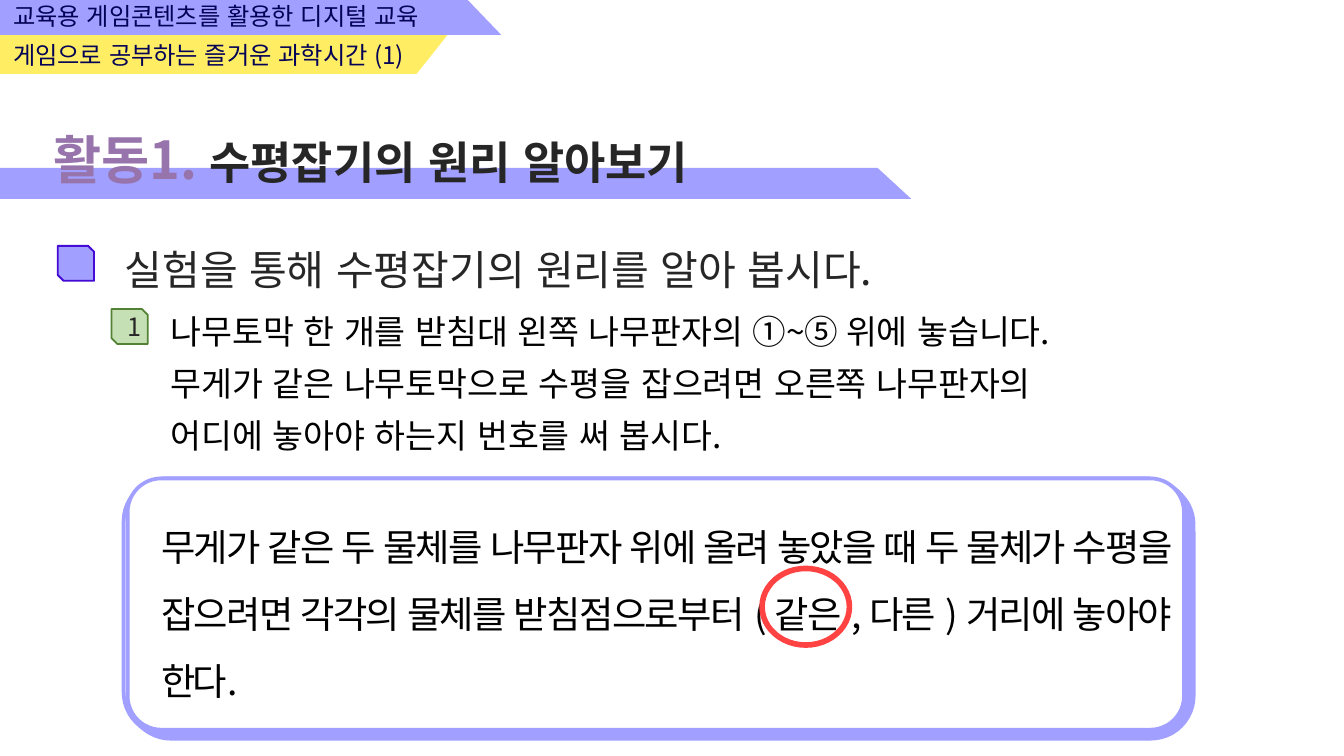
from lxml.etree import SubElement
from pptx import Presentation
from pptx.dml.color import RGBColor
from pptx.enum.lang import MSO_LANGUAGE_ID as Language
from pptx.enum.shapes import MSO_SHAPE as Preset
from pptx.enum.text import MSO_ANCHOR as Anchor, MSO_AUTO_SIZE as AutoSize, PP_ALIGN as Align
from pptx.oxml.ns import qn
from pptx.util import Inches, Pt

FONT = "Noto Sans CJK KR"
LILAC = RGBColor(0xA1, 0x9F, 0xFF)
YELLOW = RGBColor(0xFF, 0xEE, 0x63)
NAVY = RGBColor(0x04, 0x02, 0x57)
VIOLET = RGBColor(0x44, 0x0B, 0xD4)
MAUVE = RGBColor(0x97, 0x74, 0xAB)
PALE_GREEN = RGBColor(0xC5, 0xE0, 0xB4)
GREEN = RGBColor(0x54, 0x82, 0x35)
RED = RGBColor(0xFF, 0x43, 0x43)
INK = RGBColor(0x26, 0x26, 0x26)
BLACK = RGBColor(0, 0, 0)
WHITE = RGBColor(0xFF, 0xFF, 0xFF)


def write_span(para, text, size=18, color=BLACK, bold=False, tracking=0):
    span = para.add_run()
    span.text = text
    span.font.size = Pt(size)
    span.font.bold = bold
    span.font.color.rgb = color
    span.font.name = FONT
    span.font.language_id = Language.KOREAN
    properties = span._r.get_or_add_rPr()
    properties.set("kern", "0")  # keeps word gaps at full width
    SubElement(properties, qn("a:ea")).set("typeface", FONT)
    if tracking:
        properties.set("spc", str(int(tracking * 100)))


class Lesson:
    """Holds the page and draws each kind of element in the lesson style."""

    def __init__(self, page):
        self.page = page

    def fill_text(self, box, paragraphs, anchor=Anchor.TOP, align=Align.LEFT,
                  spacing=1.0, **style):
        """Each paragraph is a string, or a list of (text, style) pairs."""
        frame = box.text_frame
        frame.word_wrap = True
        frame.auto_size = AutoSize.NONE
        frame.vertical_anchor = anchor
        for index, content in enumerate(paragraphs):
            para = frame.add_paragraph() if index else frame.paragraphs[0]
            para.alignment = align
            para.line_spacing = spacing
            para.space_before = Pt(0)
            spans = [(content, {})] if isinstance(content, str) else content
            for text, own in spans:
                write_span(para, text, **{**style, **own})

    def text(self, place, paragraphs, **style):
        box = self.page.shapes.add_textbox(*map(Inches, place))
        self.fill_text(box, paragraphs, **style)

    def placeholder(self, box, place, paragraphs, **style):
        box.left, box.top, box.width, box.height = map(Inches, place)
        self.page.shapes._spTree.append(box._element)  # bring to front
        self.fill_text(box, paragraphs, **style)
        for para in box.text_frame.paragraphs:
            properties = para._p.get_or_add_pPr()
            properties.set("marL", "0")
            properties.set("indent", "0")
            SubElement(properties, qn("a:buNone"))

    def ribbon(self, top, bottom, top_right, bottom_right, color):
        builder = self.page.shapes.build_freeform(0, Inches(top))
        corners = [(top_right, top), (bottom_right, bottom), (0, bottom)]
        builder.add_line_segments([(Inches(x), Inches(y)) for x, y in corners])
        band = builder.convert_to_shape()
        band.shadow.inherit = False
        band.fill.solid()
        band.fill.fore_color.rgb = color
        band.line.fill.background()

    def shape(self, preset, place, line, weight, fill=None):
        shape = self.page.shapes.add_shape(preset, *map(Inches, place))
        shape.shadow.inherit = False
        if fill is None:
            shape.fill.background()
        else:
            shape.fill.solid()
            shape.fill.fore_color.rgb = fill
        shape.line.color.rgb = line
        shape.line.width = Pt(weight)
        return shape

    def card(self, place, rounding):
        card = self.shape(Preset.ROUNDED_RECTANGLE, place, LILAC, 2, WHITE)
        card.adjustments[0] = rounding
        effects = card._element.spPr.find(qn("a:effectLst"))
        shadow = SubElement(effects, qn("a:outerShdw"), blurRad="0",
                            dist=str(Pt(3)), dir=str(40 * 60000),
                            algn="tl", rotWithShape="0")
        SubElement(shadow, qn("a:srgbClr")).set("val", str(LILAC))


def main():
    deck = Presentation()
    deck.slide_width = Inches(10)
    deck.slide_height = deck.slide_width * 9 // 16
    page = deck.slides.add_slide(deck.slide_layouts[1])
    title, body = page.placeholders
    lesson = Lesson(page)

    # Course header
    lesson.ribbon(0.26, 0.55, 3.33, 3.1, YELLOW)
    lesson.text((0, 0.25, 3.33, 0.32), ["게임으로 공부하는 즐거운 과학시간 (1)"],
                size=13, color=NAVY)
    lesson.ribbon(0, 0.26, 3.48, 3.73, LILAC)
    lesson.text((0, -0.04, 3.49, 0.32), ["교육용 게임콘텐츠를 활용한 디지털 교육"],
                size=13, color=NAVY)

    # Activity title
    lesson.ribbon(1.25, 1.48, 6.53, 6.78, LILAC)
    heading = [("활동1. ", {"size": 28, "color": MAUVE}),
               ("수평잡기의 원리 알아보기", {"size": 24, "color": INK})]
    lesson.placeholder(title, (0.3, 0.9, 6.61, 0.57), [heading], bold=True)

    # Goal and numbered instruction
    lesson.text((0.83, 1.67, 8.66, 0.55), ["실험을 통해 수평잡기의 원리를 알아 봅시다."],
                anchor=Anchor.MIDDLE, spacing=1.3, size=22, color=INK)
    badge = Preset.SNIP_2_DIAG_RECTANGLE
    lesson.shape(badge, (0.43, 1.83, 0.27, 0.26), VIOLET, 1, LILAC)
    number = lesson.shape(badge, (0.83, 2.3, 0.27, 0.26), GREEN, 1, PALE_GREEN)
    lesson.fill_text(number, ["1"], anchor=Anchor.MIDDLE, align=Align.CENTER,
                     size=13.5, color=INK)
    lesson.placeholder(body, (1.17, 2.17, 8.66, 1.26), [
        "나무토막 한 개를 받침대 왼쪽 나무판자의 ①~⑤ 위에 놓습니다.",
        "무게가 같은 나무토막으로 수평을 잡으려면 오른쪽 나무판자의",
        "어디에 놓아야 하는지 번호를 써 봅시다.",
    ], spacing=1.3)

    # Conclusion card with the circled answer
    lesson.card((0.92, 3.56, 7.93, 1.91), 0.167)
    lesson.card((0.95, 3.56, 7.86, 1.87), 0.134)
    lesson.text((1.1, 3.67, 7.7, 1.62), [
        "무게가 같은 두 물체를 나무판자 위에 올려 놓았을 때 두 물체가 수평을 "
        "잡으려면 각각의 물체를 받침점으로부터 ( 같은 , 다른 ) 거리에 놓아야 한다.",
    ], anchor=Anchor.MIDDLE, align=Align.JUSTIFY, spacing=1.5, size=20, tracking=-1.5)
    lesson.shape(Preset.OVAL, (5.67, 4.23, 0.65, 0.57), RED, 3)

    deck.save("out.pptx")


if __name__ == "__main__":
    main()
